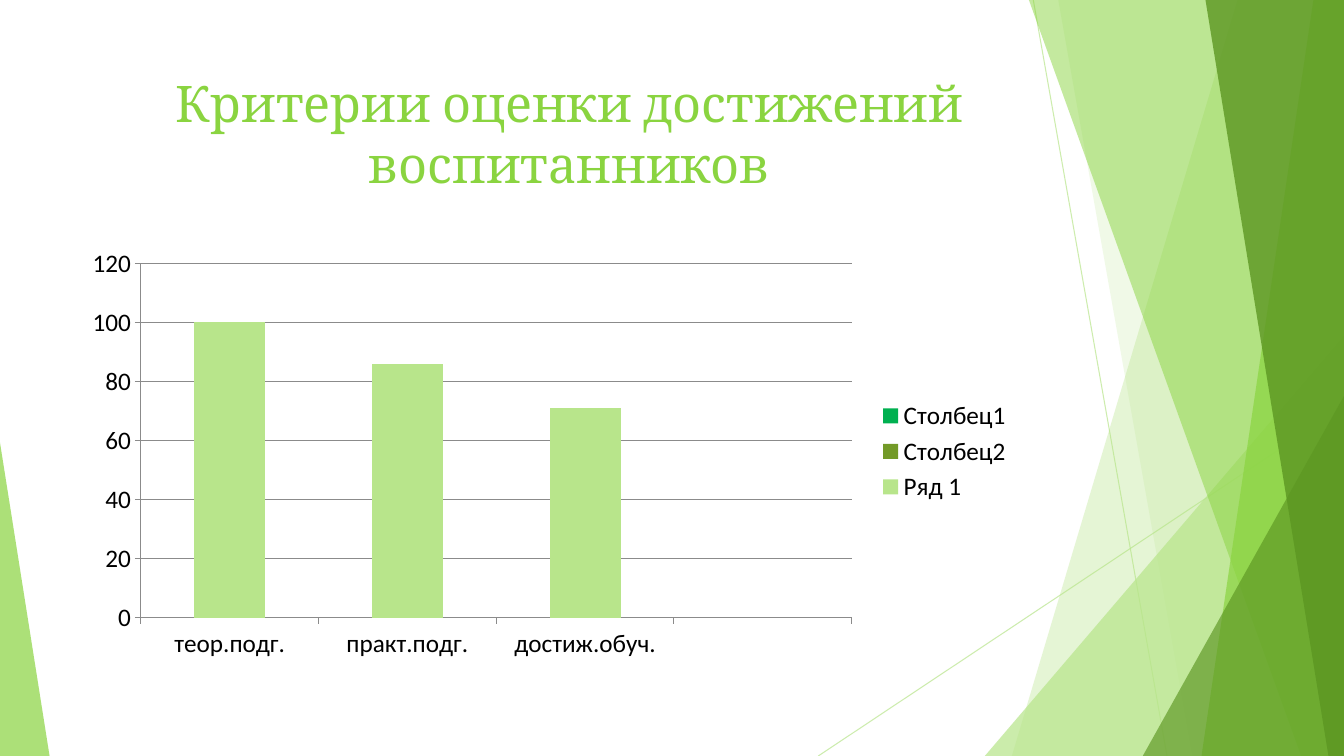
import pptx
import pptx.chart.data
import pptx.dml.color
import pptx.enum.chart
import pptx.enum.shapes
import pptx.enum.text
import pptx.oxml
import pptx.oxml.ns
import pptx.util
from lxml import etree

Cm = pptx.util.Cm
qn = pptx.oxml.ns.qn
WIDTH, HEIGHT = 33.87, 19.05
LIGHT, GREEN, DARK, GRID = "B8E58B", "8AD440", "5C9622", "8B8B8B"


def paint(color_format, color, opacity=100):
    color_format.rgb = pptx.dml.color.RGBColor.from_string(color)
    if opacity < 100:
        # the colour element is the only one of its kind below the fill
        parent = color_format._xFill
        alpha = etree.SubElement(parent.find(qn("a:srgbClr")), qn("a:alpha"))
        alpha.set("val", str(opacity * 1000))


presentation = pptx.Presentation()
presentation.slide_width = Cm(WIDTH)
presentation.slide_height = Cm(HEIGHT)
slide = presentation.slides.add_slide(presentation.slide_layouts[5])

# Thin crossing lines
for x1, y1, x2, y2 in [(26.04, 0, 29.41, HEIGHT), (WIDTH, 10.24, 20.62, HEIGHT)]:
    connector = slide.shapes.add_connector(
        pptx.enum.shapes.MSO_CONNECTOR.STRAIGHT, Cm(x1), Cm(y1), Cm(x2), Cm(y2))
    connector.line.width = pptx.util.Pt(0.75)
    connector.line.fill.solid()
    paint(connector.line.fill.fore_color, LIGHT, 70)
    etree.SubElement(connector.element.spPr, qn("a:effectLst"))

# Translucent facets, back to front: bands run from a top x and a bottom x to
# the right edge, triangles rise from the bottom edge (left, top, width, apex)
facets = [
    ("band", (31.19, 25.5), LIGHT, 36),
    ("band", (26.67, 30.05), LIGHT, 20),
    ("triangle", (24.82, 8.46, 9.05, 1), LIGHT, 72),
    ("band", (25.93, 32.79), GREEN, 50),
    ("band", (33.1, 30.28), GREEN, 70),
    ("band", (30.38, 33.48), DARK, 80),
    ("triangle", (28.8, 9.98, 5.07, 1), DARK, 66),
    ("triangle", (0, 11.15, 1.25, 0), GREEN, 70),
]
for kind, geometry, color, opacity in facets:
    if kind == "band":
        top_x, bottom_x = geometry
        builder = slide.shapes.build_freeform(Cm(top_x), 0)
        builder.add_line_segments([(Cm(WIDTH), 0), (Cm(WIDTH), Cm(HEIGHT)),
                                   (Cm(bottom_x), Cm(HEIGHT))], close=True)
        shape = builder.convert_to_shape()
    else:
        left, top, width, apex = geometry
        shape = slide.shapes.add_shape(
            pptx.enum.shapes.MSO_SHAPE.ISOSCELES_TRIANGLE,
            Cm(left), Cm(top), Cm(width), Cm(HEIGHT - top))
        shape.adjustments[0] = apex
    shape.shadow.inherit = False
    shape.line.fill.background()
    shape.fill.solid()
    paint(shape.fill.fore_color, color, opacity)

# Title, in front of the facets
title = slide.shapes.title
title.element.getparent().append(title.element)
title.left, title.top, title.width, title.height = Cm(1.88), Cm(1.7), Cm(24.94), Cm(3.66)
frame = title.text_frame
frame.word_wrap = True
frame.auto_size = pptx.enum.text.MSO_AUTO_SIZE.NONE
frame.vertical_anchor = pptx.enum.text.MSO_ANCHOR.TOP
paragraph = frame.paragraphs[0]
paragraph.alignment = pptx.enum.text.PP_ALIGN.CENTER
run = paragraph.add_run()
run.text = "Критерии оценки достижений воспитанников"
run.font.name = "Cambria"
run.font.size = pptx.util.Pt(36)
paint(run.font.color, GREEN)

# Chart of achievements
chart_data = pptx.chart.data.CategoryChartData()
chart_data.categories = ["теор.подг.", "практ.подг.", "достиж.обуч.", ""]
chart_data.add_series("Ряд 1", [100, 86, 71, None])
chart_data.add_series("Столбец2", [None] * 4)
chart_data.add_series("Столбец1", [None] * 4)
chart = slide.shapes.add_chart(
    pptx.enum.chart.XL_CHART_TYPE.COLUMN_STACKED,
    Cm(1.88), Cm(5.99), Cm(23.88), Cm(10.77), chart_data).chart
chart.has_title = False
chart.font.name = "Calibri"
chart.font.size = pptx.util.Pt(18)
paint(chart.font.color, "000000")
chart.has_legend = True
chart.legend.position = pptx.enum.chart.XL_LEGEND_POSITION.RIGHT
chart.legend.include_in_layout = False

plot = chart.plots[0]
plot.gap_width = 150
plot.overlap = 100
plot.vary_by_categories = False
for series, color in zip(plot.series, [LIGHT, "739A28", "00B050"]):
    series.format.fill.solid()
    paint(series.format.fill.fore_color, color)

# Axes and gridlines
value_axis = chart.value_axis
value_axis.minimum_scale, value_axis.maximum_scale, value_axis.major_unit = 0, 120, 20
value_axis.has_major_gridlines = True
for axis in (chart.category_axis, value_axis):
    axis.major_tick_mark = pptx.enum.chart.XL_TICK_MARK.OUTSIDE
for line in (chart.category_axis.format.line, value_axis.format.line,
             value_axis.major_gridlines.format.line):
    line.width = pptx.util.Pt(0.75)
    line.fill.solid()
    paint(line.fill.fore_color, GRID)

# Inner plot area as shares of the chart frame
plot_area = chart.element.find(".//" + qn("c:plotArea"))
for old_layout in plot_area.findall(qn("c:layout")):
    plot_area.remove(old_layout)
layout = etree.Element(qn("c:layout"))
plot_area.insert(0, layout)
manual = etree.SubElement(layout, qn("c:manualLayout"))
for tag, value in [("layoutTarget", "inner"), ("xMode", "edge"), ("yMode", "edge"),
                   ("x", "0.07"), ("y", "0.06"), ("w", "0.75"), ("h", "0.83")]:
    etree.SubElement(manual, qn("c:" + tag)).set("val", value)

presentation.save("out.pptx")
